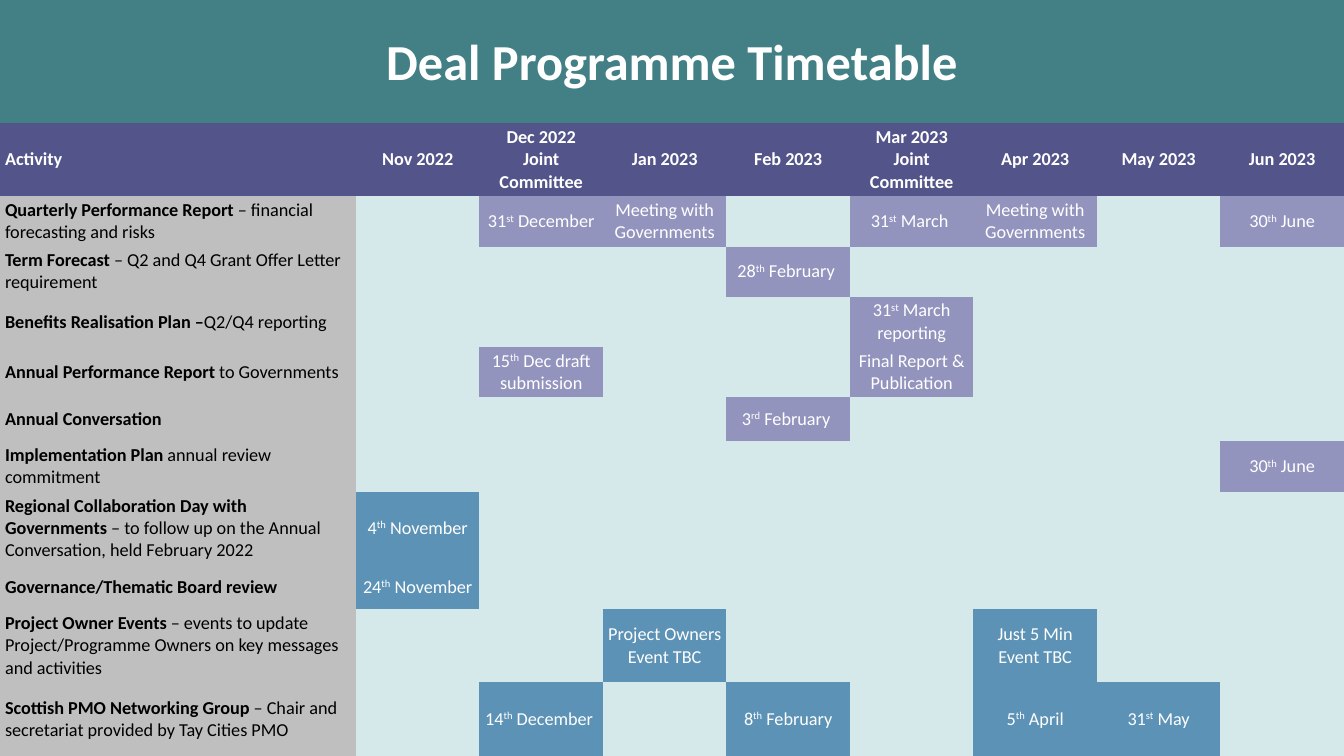
from pptx import Presentation
from pptx.dml.color import RGBColor
from pptx.enum.text import MSO_ANCHOR as Anchor, PP_ALIGN as Align
from pptx.util import Inches, Pt

TEAL = RGBColor(0x43, 0x80, 0x86)
INDIGO = RGBColor(0x53, 0x54, 0x8A)
GREY = RGBColor(0xBF, 0xBF, 0xBF)
PALE = RGBColor(0xD6, 0xE9, 0xEA)
LILAC = RGBColor(0x93, 0x94, 0xBE)
BLUE = RGBColor(0x5C, 0x92, 0xB5)
WHITE = RGBColor(0xFF, 0xFF, 0xFF)
BLACK = RGBColor(0, 0, 0)

# Content: a part between carets is superscript
TITLE = "Deal Programme Timetable"
MONTHS = ["Nov 2022", "Dec 2022\nJoint Committee", "Jan 2023", "Feb 2023",
          "Mar 2023\nJoint Committee", "Apr 2023", "May 2023", "Jun 2023"]
NOV, DEC, JAN, FEB, MAR, APR, MAY, JUN = range(1, 9)

# Row height, date colour, bold activity, plain detail, dates by month
ACTIVITIES = [
    (0.50, LILAC, "Quarterly Performance Report", " – financial forecasting and risks",
     {DEC: "31^st^ December", JAN: "Meeting with Governments", MAR: "31^st^ March ",
      APR: "Meeting with Governments", JUN: "30^th^ June"}),
    (0.50, LILAC, "Term Forecast ", "– Q2 and Q4 Grant Offer Letter requirement",
     {FEB: "28^th^ February "}),
    (0.50, LILAC, "Benefits Realisation Plan –", "Q2/Q4 reporting",
     {MAR: "31^st^ March reporting"}),
    (0.50, LILAC, "Annual Performance Report ", "to Governments",
     {DEC: "15^th^ Dec draft submission", MAR: "Final Report & Publication"}),
    (0.44, LILAC, "Annual Conversation", "", {FEB: "3^rd^ February "}),
    (0.50, LILAC, "Implementation Plan ", "annual review commitment",
     {JUN: "30^th^ June"}),
    (0.73, BLUE, "Regional Collaboration Day with Governments",
     " – to follow up on the Annual Conversation, held February 2022",
     {NOV: "4^th^ November"}),
    (0.44, BLUE, "Governance/Thematic Board review", "", {NOV: "24^th^ November"}),
    (0.73, BLUE, "Project Owner Events ",
     "– events to update Project/Programme Owners on key messages and activities",
     {JAN: "Project Owners Event TBC", APR: "Just 5 Min Event TBC"}),
    (0.73, BLUE, "Scottish PMO Networking Group ",
     "– Chair and secretariat provided by Tay Cities PMO",
     {DEC: "14^th^ December ", FEB: "8^th^ February", APR: "5^th^ April", MAY: "31^st^ May"}),
]

# Layout
WIDTH, HEIGHT = 13.33, 7.5
TITLE_TOP, TITLE_HEIGHT = -0.03, 1.25
TABLE_TOP = TITLE_TOP + TITLE_HEIGHT
ACTIVITY_WIDTH = 3.53
MONTH_WIDTH = (WIDTH - ACTIVITY_WIDTH) / len(MONTHS)
HEADER_HEIGHT = 0.73
PLAIN_TABLE_STYLE = "{2D5ABB26-0587-4C30-8999-92F81FD0307C}"
CELL_FORMAT = {"margin_left": Inches(0.05), "margin_right": Inches(0.05),
               "margin_top": Inches(0.02), "margin_bottom": Inches(0.02),
               "vertical_anchor": Anchor.MIDDLE}


def fill(target, colour):
    target.fill.solid()
    target.fill.fore_color.rgb = colour


def add_run(paragraph, text, colour, bold=False, size=13, raised=False):
    run = paragraph.add_run()
    run.text = text
    for name, value in {"name": "Calibri", "size": Pt(size), "bold": bold}.items():
        setattr(run.font, name, value)
    run.font.color.rgb = colour
    if raised:
        run._r.get_or_add_rPr().set("baseline", "30000")


def write_centred(cell, text, bold=False):
    frame = cell.text_frame
    for number, line in enumerate(text.split("\n")):
        paragraph = frame.add_paragraph() if number else frame.paragraphs[0]
        paragraph.alignment = Align.CENTER
        for index, part in enumerate(line.split("^")):
            add_run(paragraph, part, WHITE, bold, raised=index % 2 == 1)


presentation = Presentation()
presentation.slide_width, presentation.slide_height = Inches(WIDTH), Inches(HEIGHT)
slide = presentation.slides.add_slide(presentation.slide_layouts[5])

# Title band
title = slide.shapes.title
title.left, title.top = 0, Inches(TITLE_TOP)
title.width, title.height = Inches(WIDTH), Inches(TITLE_HEIGHT)
fill(title, TEAL)
title.text_frame.vertical_anchor = Anchor.MIDDLE
title_paragraph = title.text_frame.paragraphs[0]
title_paragraph.alignment = Align.CENTER
add_run(title_paragraph, TITLE, WHITE, True, 36)

# Timetable grid
table = slide.shapes.add_table(
    len(ACTIVITIES) + 1, len(MONTHS) + 1, 0, Inches(TABLE_TOP),
    Inches(WIDTH), Inches(HEIGHT - TABLE_TOP)).table
table.horz_banding = False
table._tbl.tblPr[0].text = PLAIN_TABLE_STYLE
for column, width in zip(table.columns, [ACTIVITY_WIDTH] + [MONTH_WIDTH] * len(MONTHS)):
    column.width = Inches(width)
heights = [HEADER_HEIGHT] + [activity[0] for activity in ACTIVITIES]
for row, height in zip(table.rows, heights):
    row.height = Inches(height * (HEIGHT - TABLE_TOP) / sum(heights))
for cell in table.iter_cells():
    fill(cell, PALE)
    for name, value in CELL_FORMAT.items():
        setattr(cell, name, value)

# Header row
fill(table.cell(0, 0), INDIGO)
add_run(table.cell(0, 0).text_frame.paragraphs[0], "Activity", WHITE, True)
for column, month in enumerate(MONTHS, 1):
    fill(table.cell(0, column), INDIGO)
    write_centred(table.cell(0, column), month, True)

# Activities and their dates
for row, (_, colour, activity, detail, dates) in enumerate(ACTIVITIES, 1):
    activity_cell = table.cell(row, 0)
    fill(activity_cell, GREY)
    paragraph = activity_cell.text_frame.paragraphs[0]
    add_run(paragraph, activity, BLACK, True)
    if detail:
        add_run(paragraph, detail, BLACK)
    for month, date in dates.items():
        fill(table.cell(row, month), colour)
        write_centred(table.cell(row, month), date)

presentation.save("out.pptx")
